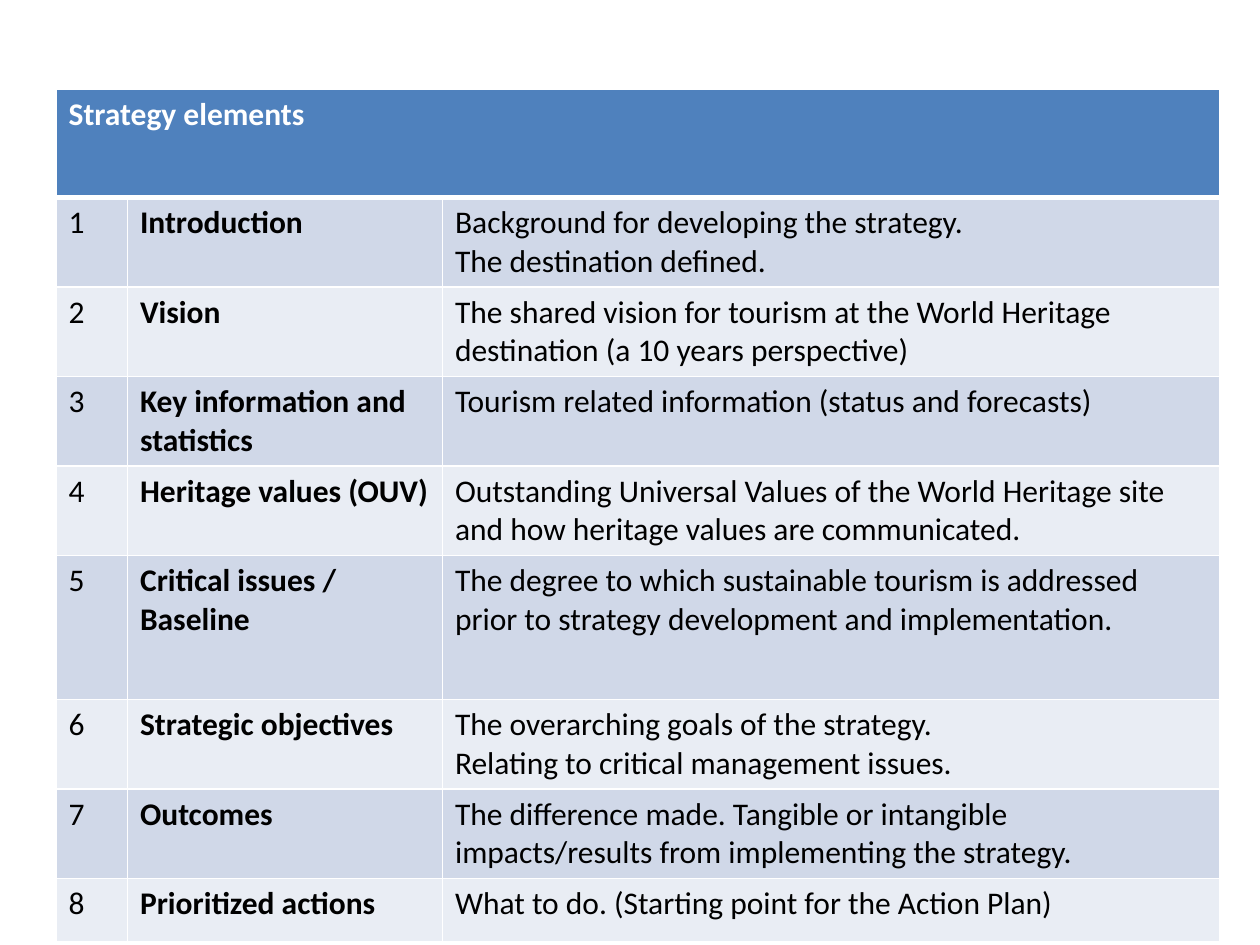
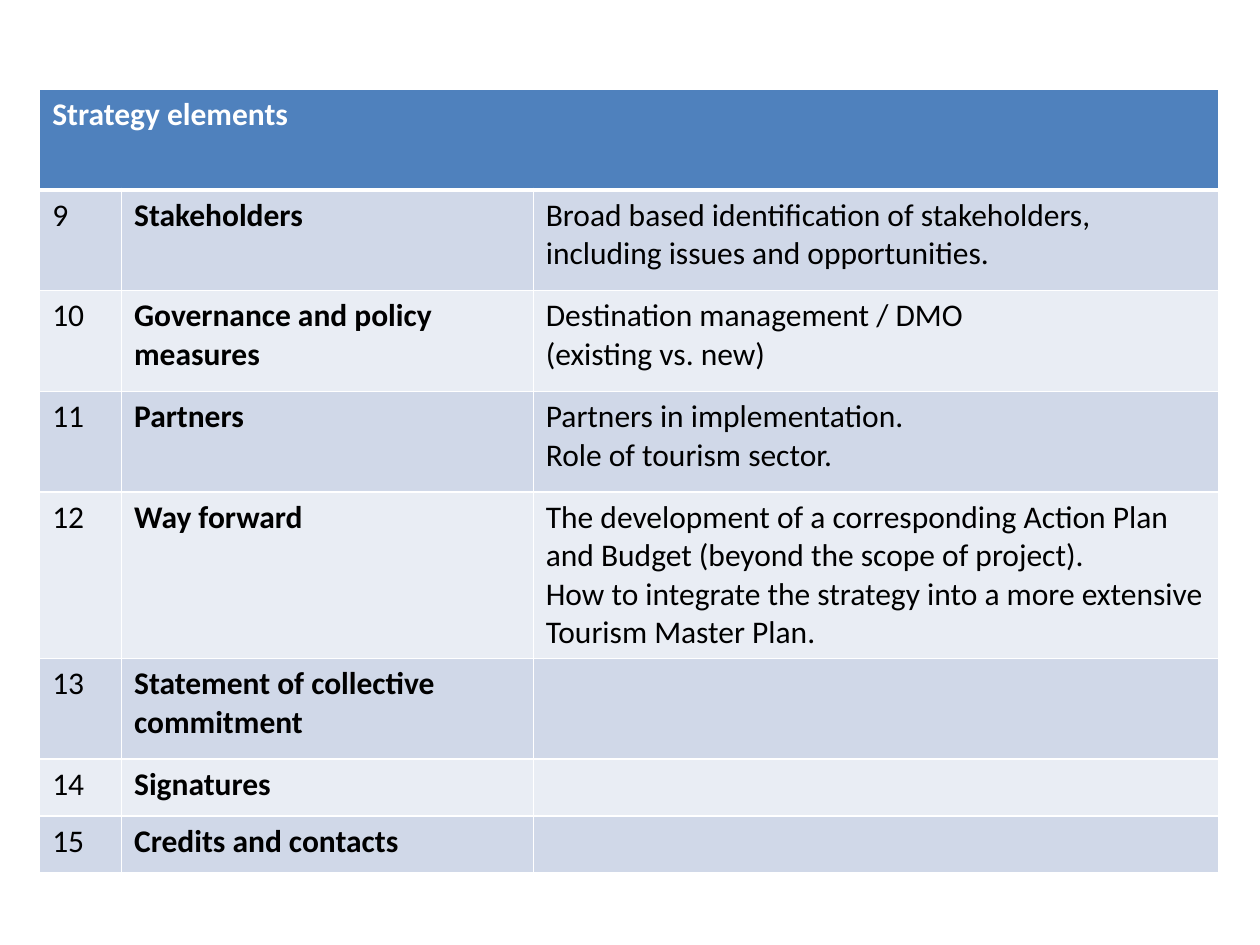
from pptx import Presentation
from pptx import util as u
from pptx.dml import color
from pptx.oxml import parse_xml
from pptx.oxml import ns

COLORS = {
    "header": "4F81BD",
    "odd": "D0D8E8",
    "even": "E9EDF4",
    "border": "FFFFFF",
    "header_text": "FFFFFF",
    "text": "000000",
}
HEADING = "Strategy elements"
TABLE_TOP = 1.8

FIRST_ELEMENTS = [
    ("Introduction", "Background for developing the strategy.\nThe destination defined."),
    ("Vision", "The shared vision for tourism at the World Heritage destination (a 10 years perspective)"),
    ("Key information and statistics", "Tourism related information (status and forecasts)"),
    ("Heritage values (OUV)",
     "Outstanding Universal Values of the World Heritage site and how heritage values are communicated."),
    ("Critical issues / Baseline",
     "The degree to which sustainable tourism is addressed prior to strategy development and implementation."),
    ("Strategic objectives", "The overarching goals of the strategy.\nRelating to critical management issues."),
    ("Outcomes",
     "The difference made. Tangible or intangible impacts/results from implementing the strategy."),
    ("Prioritized actions", "What to do. (Starting point for the Action Plan)"),
]
LAST_ELEMENTS = [
    ("Stakeholders", "Broad based identification of stakeholders, including issues and opportunities."),
    ("Governance and policy measures", "Destination management / DMO\n(existing vs. new)"),
    ("Partners", "Partners in implementation.\nRole of tourism sector."),
    ("Way forward",
     "The development of a corresponding Action Plan and Budget (beyond the scope of project).\n"
     "How to integrate the strategy into a more extensive Tourism Master Plan."),
    ("Statement of collective commitment", ""),
    ("Signatures", ""),
    ("Credits and contacts", ""),
]


class StrategyDeck:
    font_format = {"name": "Calibri", "size": u.Pt(18)}

    def __init__(self):
        self.presentation = Presentation()
        self.presentation.slide_width = u.Cm(25.4)
        self.presentation.slide_height = u.Cm(19.05)
        self.slide = None

    def add_slide(self):
        self.slide = self.presentation.slides.add_slide(self.presentation.slide_layouts[6])

    def add_borders(self, cell, widths):
        properties = cell._tc.get_or_add_tcPr()
        for side, width in zip("LRTB", widths):
            properties.append(parse_xml(
                f'<a:ln{side} {ns.nsdecls("a")} w="{u.Pt(width)}"><a:solidFill>'
                f'<a:srgbClr val="{COLORS["border"]}"/></a:solidFill></a:ln{side}>'))

    def fill_cell(self, cell, content, fill, text_color="text", bold=False, top=1, bottom=1):
        self.add_borders(cell, (1, 1, top, bottom))
        cell.fill.solid()
        cell.fill.fore_color.rgb = color.RGBColor.from_string(COLORS[fill])
        cell.text = content
        for paragraph in cell.text_frame.paragraphs:
            for run in paragraph.runs:
                for name, value in {**self.font_format, "bold": bold}.items():
                    setattr(run.font, name, value)
                run.font.color.rgb = color.RGBColor.from_string(COLORS[text_color])

    def add_elements_table(self, elements, first_number, left, column_widths, row_heights):
        shape = self.slide.shapes.add_table(
            len(row_heights), len(column_widths), u.Cm(left), u.Cm(TABLE_TOP),
            u.Cm(sum(column_widths)), u.Cm(sum(row_heights)))
        table = shape.table
        for column, width in zip(table.columns, column_widths):
            column.width = u.Cm(width)
        for row, height in zip(table.rows, row_heights):
            row.height = u.Cm(height)

        heading = table.cell(0, 0)
        heading.merge(table.cell(0, len(column_widths) - 1))
        self.fill_cell(heading, HEADING, "header", "header_text", bold=True, bottom=3)

        for row, (element, description) in enumerate(elements, 1):
            contents = (str(first_number + row - 1), element, description)
            for column, content in enumerate(contents):
                self.fill_cell(table.cell(row, column), content, "odd" if row % 2 else "even",
                               bold=column == 1, top=3 if row == 1 else 1)


def main():
    deck = StrategyDeck()
    deck.add_slide()
    deck.add_elements_table(FIRST_ELEMENTS, 1, 1.13, (1.44, 6.35, 15.67),
                            [2.18] + [1.8] * 4 + [2.9] + [1.8] * 2 + [1.27])
    deck.add_slide()
    deck.add_elements_table(LAST_ELEMENTS, len(FIRST_ELEMENTS) + 1, 0.8, (1.65, 8.3, 13.82),
                            [2.03] * 4 + [3.35, 2.03] + [1.15] * 2)
    deck.presentation.save("out.pptx")


if __name__ == "__main__":
    main()
